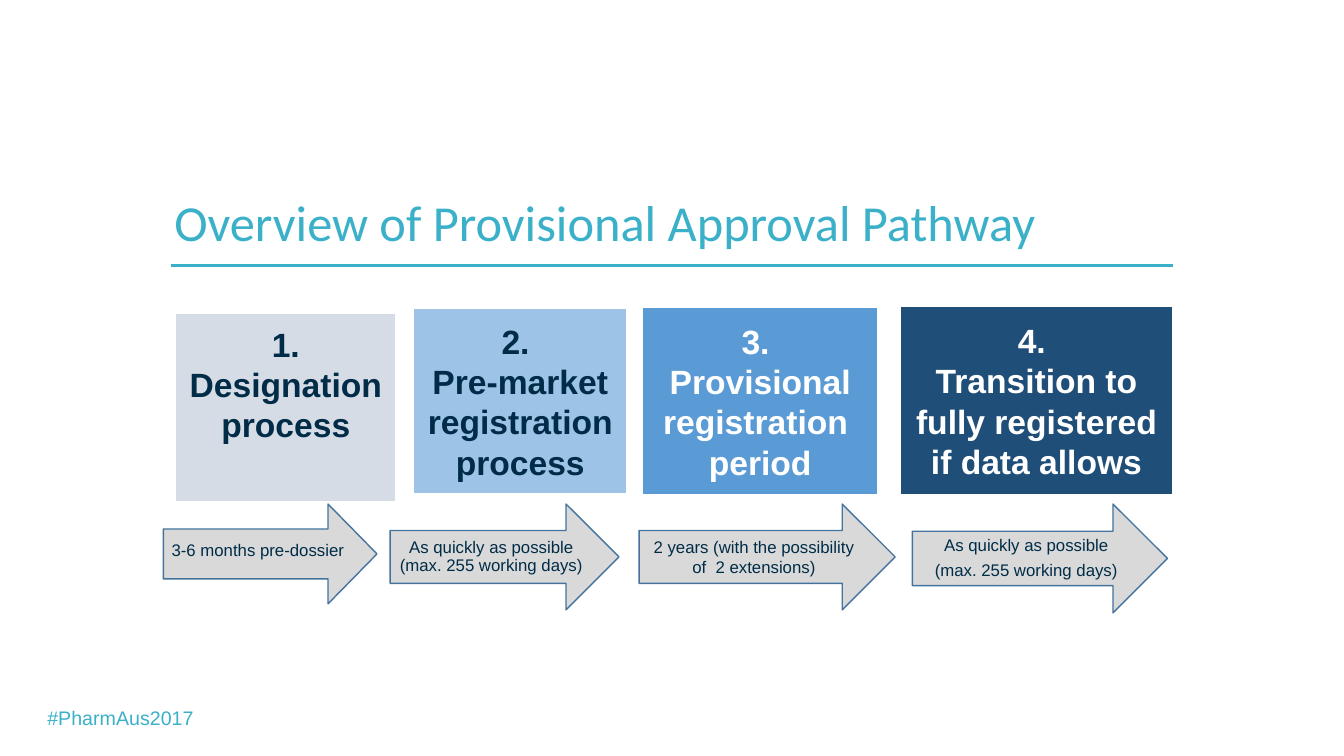
"""Build the slide on the provisional approval pathway."""
import pptx
import pptx.dml.color
import pptx.enum.shapes
import pptx.enum.text
import pptx.oxml.xmlchemy
import pptx.util

RGBColor = pptx.dml.color.RGBColor
Shape = pptx.enum.shapes.MSO_SHAPE
Anchor = pptx.enum.text.MSO_ANCHOR
Align = pptx.enum.text.PP_ALIGN
Pt = pptx.util.Pt

TEAL = RGBColor(0x3B, 0xB0, 0xC9)
NAVY = RGBColor(0x00, 0x2C, 0x47)
WHITE = RGBColor(0xFF, 0xFF, 0xFF)
PALE = RGBColor(0xD6, 0xDC, 0xE5)
LIGHT = RGBColor(0x9D, 0xC3, 0xE6)
MIDDLE = RGBColor(0x5B, 0x9B, 0xD5)
DARK = RGBColor(0x1F, 0x4E, 0x79)
GREY = RGBColor(0xD9, 0xD9, 0xD9)
OUTLINE = RGBColor(0x43, 0x73, 0x9E)

# Areas are left, top, width and height in percent of the slide.
TITLE = ("Overview of Provisional Approval Pathway", (12.23, 20.13, 80.95, 19.33))
HASHTAG = ("#PharmAus2017", (2.78, 92.67, 13.2, 4.53))
RULE = (12.75, 87.25, 35.07)
STAGES = [
    ("1. Designation process", (13.05, 41.47, 16.43, 24.93), PALE, NAVY, Anchor.TOP),
    ("2. \vPre-market registration process", (30.76, 40.8, 15.9, 24.53), LIGHT, NAVY, Anchor.MIDDLE),
    ("3. \vProvisional registration \vperiod", (47.79, 40.67, 17.55, 24.8), MIDDLE, WHITE, Anchor.MIDDLE),
    ("4. \vTransition to fully registered if data allows", (66.99, 40.53, 20.26, 24.93), DARK, WHITE, Anchor.MIDDLE),
]
ARROW_TOP = 66.67
DURATIONS = [
    ("3-6 months pre-dossier", 12.15, 15.9, 13.2, Pt(9)),
    ("As quickly as possible\v(max. 255 working days)", 29.03, 17.03, 14, 0.9),
    ("2 years (with the possibility of  2 extensions)", 47.56, 19.05, 14, 1.0),
    ("As quickly as possible\n(max. 255 working days)", 67.89, 18.98, 14.4, 0.9),
]

deck = pptx.Presentation()
deck.slide_width = pptx.util.Inches(13.33)
deck.slide_height = pptx.util.Inches(7.5)
page = deck.slides.add_slide(deck.slide_layouts[6])


def across(share):
    return round(deck.slide_width * share / 100)


def down(share):
    return round(deck.slide_height * share / 100)


def place(area):
    left, top, width, height = area
    return across(left), down(top), across(width), down(height)


def write(shape, text, size, color, font="Arial", bold=False, align=Align.LEFT,
          anchor=Anchor.MIDDLE, spacing=1.0, insets=(0.1, 0.05)):
    frame = shape.text_frame
    frame.word_wrap = True
    frame.vertical_anchor = anchor
    frame.margin_left = frame.margin_right = pptx.util.Inches(insets[0])
    frame.margin_top = frame.margin_bottom = pptx.util.Inches(insets[1])
    frame.text = text
    for number, para in enumerate(frame.paragraphs):
        para.alignment = align
        para.line_spacing = spacing
        if number:
            para.space_before = Pt(4.5)
        for span in para.runs:
            span.font.name = font
            span.font.size = Pt(size)
            span.font.bold = bold
            span.font.color.rgb = color


def add_block(kind, area, fill, line):
    block = page.shapes.add_shape(kind, *place(area))
    block.shadow.inherit = False
    block.fill.solid()
    block.fill.fore_color.rgb = fill
    block.line.color.rgb = line
    block.line.width = Pt(1)
    return block


start, end, level = RULE
rule = page.shapes.add_connector(pptx.enum.shapes.MSO_CONNECTOR.STRAIGHT,
                                 across(start), down(level), across(end), down(level))
rule.line.color.rgb = TEAL
rule.line.width = Pt(2)
rule._element.spPr.append(pptx.oxml.xmlchemy.OxmlElement("a:effectLst"))

text, area = TITLE
write(page.shapes.add_textbox(*place(area)), text, 36, TEAL, "Calibri", spacing=0.9)

for text, area, fill, color, anchor in STAGES:
    stage = add_block(Shape.RECTANGLE, area, fill, WHITE)
    write(stage, text, 24, color, bold=True, align=Align.CENTER, anchor=anchor, insets=(0.1, 0.1))

for text, left, width, height, spacing in DURATIONS:
    arrow = add_block(Shape.RIGHT_ARROW, (left, ARROW_TOP, width, height), GREY, OUTLINE)
    arrow.adjustments[1] = 0.49 if text == DURATIONS[0][0] else 0.5
    write(arrow, text, 12, NAVY, align=Align.CENTER, spacing=spacing, insets=(0.07, 0.04))

text, area = HASHTAG
write(page.shapes.add_textbox(*place(area)), text, 14, TEAL, anchor=Anchor.TOP)

deck.save("out.pptx")
